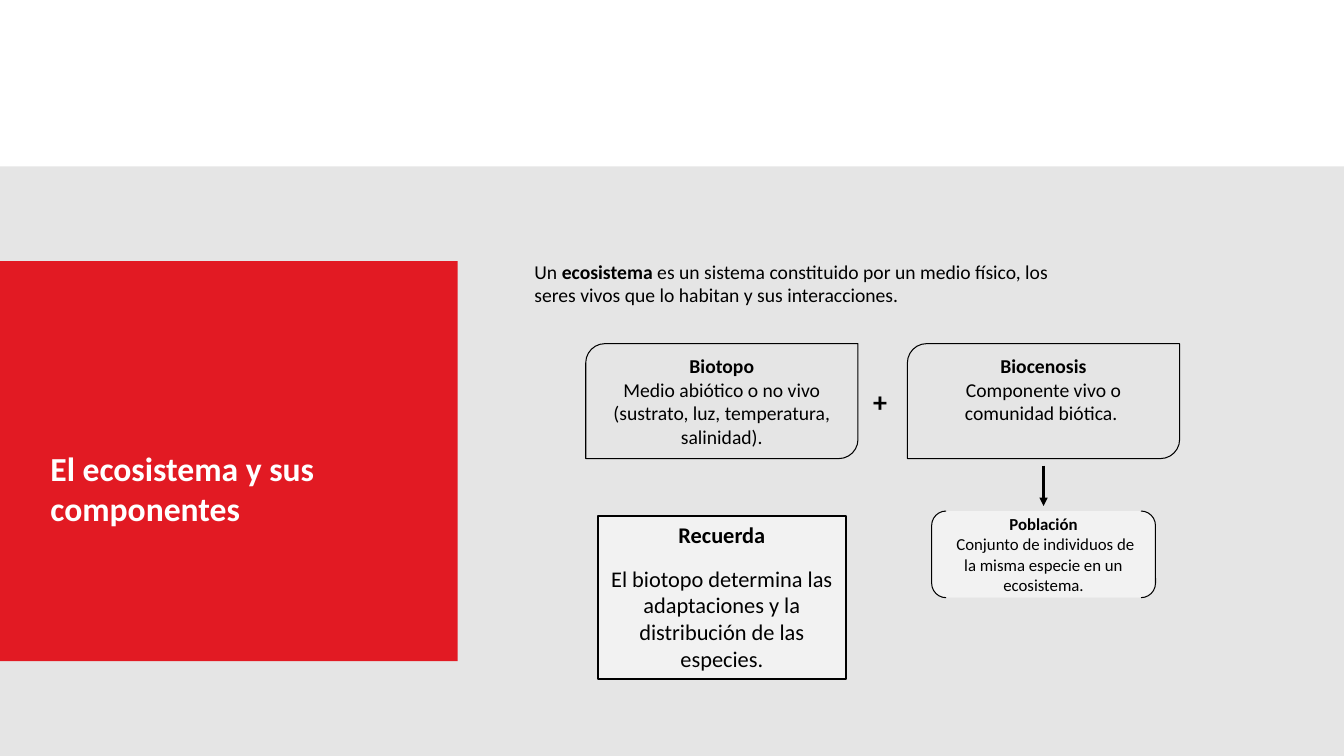
"""Build the slide on the ecosystem and its components."""
from dataclasses import dataclass
from typing import Optional

import pptx
import pptx.dml.color
import pptx.enum.shapes
import pptx.enum.text
import pptx.oxml
import pptx.oxml.ns
import pptx.util
from pptx.util import Inches

COLORS = {"grey": "E5E5E5", "red": "E21A23", "white": "FFFFFF", "black": "000000", "pale": "F2F2F2"}
FONT = "Calibri"
SHAPE = pptx.enum.shapes.MSO_SHAPE
ALIGN = pptx.enum.text.PP_ALIGN
ANCHOR = pptx.enum.text.MSO_ANCHOR
AUTO_SIZE = pptx.enum.text.MSO_AUTO_SIZE


@dataclass(frozen=True)
class Run:
    """A piece of text with its weight."""
    text: str
    bold: bool = False


@dataclass(frozen=True)
class Box:
    """A preset shape with its place, style and paragraphs."""
    preset: int
    at: tuple[float, float, float, float]
    paragraphs: tuple[tuple[Run, ...], ...] = ()
    size: float = 14
    align: int = ALIGN.CENTER
    anchor: int = ANCHOR.TOP
    fill: Optional[str] = None
    opacity: int = 100
    line_width: float = 0
    space_after: float = 0
    grow: bool = False


def concept(heading: str, definition: str) -> tuple[tuple[Run, ...], ...]:
    """Return a bold heading paragraph and a plain definition paragraph."""
    return (Run(heading, True),), (Run(definition),)


PANELS = [
    Box(SHAPE.RECTANGLE, (0, 1.65, 13.33, 5.85), fill="grey"),
    Box(SHAPE.RECTANGLE, (0, 2.59, 4.54, 3.97), fill="red"),
]
COMPONENTS = [
    Box(SHAPE.ROUND_2_DIAG_RECTANGLE, (left, 3.41, 2.7, 1.14), concept(heading, definition), line_width=0.75)
    for left, heading, definition in (
        (5.81, "Biotopo", "Medio abiótico o no vivo (sustrato, luz, temperatura, salinidad)."),
        (9, "Biocenosis", "Componente vivo o comunidad biótica. "),
    )
]
DETAILS = [
    Box(SHAPE.DOUBLE_BRACKET, (9.24, 5.07, 2.22, 0.86),
        concept("Población", " Conjunto de individuos de la misma especie en un ecosistema."),
        size=12, anchor=ANCHOR.MIDDLE, fill="white", opacity=50, line_width=0.75),
    Box(SHAPE.ROUNDED_RECTANGLE, (5.16, 2.38, 5.42, 0.86),
        ((Run("Un "), Run("ecosistema", True),
          Run(" es un sistema constituido por un medio físico, los seres vivos que lo habitan y sus interacciones.")),),
        align=ALIGN.LEFT, anchor=ANCHOR.MIDDLE),
    Box(SHAPE.RECTANGLE, (5.93, 5.12, 2.46, 1.62),
        concept("Recuerda", "El biotopo determina las adaptaciones y la distribución de las especies."),
        size=16, fill="pale", line_width=1.5, space_after=12, grow=True),
    Box(SHAPE.ROUNDED_RECTANGLE, (8.54, 3.55, 0.45, 0.86), ((Run("+", True),),),
        size=20, align=ALIGN.LEFT, anchor=ANCHOR.MIDDLE),
]


def rgb(name: str) -> pptx.dml.color.RGBColor:
    """Return a named colour."""
    return pptx.dml.color.RGBColor.from_string(COLORS[name])


def add_run(paragraph, run: Run, size: float, color: str) -> None:
    """Append one formatted run to a paragraph."""
    piece = paragraph.add_run()
    piece.text = run.text
    piece.font.name = FONT
    piece.font.size = pptx.util.Pt(size)
    piece.font.bold = run.bold
    piece.font.color.rgb = rgb(color)


def paint(shape, box: Box) -> None:
    """Set the fill, outline and shadow of a shape."""
    shape.shadow.inherit = False
    if box.fill:
        shape.fill.solid()
        shape.fill.fore_color.rgb = rgb(box.fill)
        if box.opacity < 100:
            color = shape.fill._xPr.find(".//" + pptx.oxml.ns.qn("a:srgbClr"))
            alpha = pptx.oxml.parse_xml(f'<a:alpha {pptx.oxml.ns.nsdecls("a")} val="{box.opacity * 1000}"/>')
            color.append(alpha)
    else:
        shape.fill.background()
    if box.line_width:
        shape.line.color.rgb = rgb("black")
        shape.line.width = pptx.util.Pt(box.line_width)
    else:
        shape.line.fill.background()


def draw_box(slide, box: Box) -> None:
    """Add a box with its text to the slide."""
    shape = slide.shapes.add_shape(box.preset, *map(Inches, box.at))
    paint(shape, box)
    frame = shape.text_frame
    frame.word_wrap = True
    frame.vertical_anchor = box.anchor
    if box.grow:
        frame.auto_size = AUTO_SIZE.SHAPE_TO_FIT_TEXT
    for index, runs in enumerate(box.paragraphs):
        paragraph = frame.add_paragraph() if index else frame.paragraphs[0]
        paragraph.alignment = box.align
        if box.space_after and index < len(box.paragraphs) - 1:
            paragraph.space_after = pptx.util.Pt(box.space_after)
        for run in runs:
            add_run(paragraph, run, box.size, "black")


def draw_title(slide, text: str) -> None:
    """Place the title in front of the red panel."""
    title = slide.shapes.title
    slide.shapes._spTree.append(title._element)
    title.left, title.top, title.width, title.height = map(Inches, (0.4, 4.39, 3.24, 0.91))
    frame = title.text_frame
    frame.word_wrap = True
    frame.vertical_anchor = ANCHOR.TOP
    frame.auto_size = AUTO_SIZE.SHAPE_TO_FIT_TEXT
    frame.paragraphs[0].alignment = ALIGN.LEFT
    add_run(frame.paragraphs[0], Run(text, True), 24, "white")


def draw_arrow(slide, x: float, top: float, bottom: float) -> None:
    """Add a downward arrow."""
    arrow = slide.shapes.add_connector(
        pptx.enum.shapes.MSO_CONNECTOR.STRAIGHT, Inches(x), Inches(top), Inches(x), Inches(bottom))
    arrow.line.color.rgb = rgb("black")
    arrow.line.width = pptx.util.Pt(1.5)
    namespace = pptx.oxml.ns.nsdecls("a")
    arrow.line._get_or_add_ln().append(pptx.oxml.parse_xml(f'<a:tailEnd {namespace} type="triangle"/>'))
    arrow._element.spPr.append(pptx.oxml.parse_xml(f"<a:effectLst {namespace}/>"))


def main() -> None:
    """Build and save the presentation."""
    deck = pptx.Presentation()
    deck.slide_width, deck.slide_height = Inches(13.33), Inches(7.5)
    slide = deck.slides.add_slide(deck.slide_layouts[5])
    for panel in PANELS:
        draw_box(slide, panel)
    draw_title(slide, "El ecosistema y sus componentes")
    for box in COMPONENTS + DETAILS:
        draw_box(slide, box)
    draw_arrow(slide, 10.35, 4.62, 5.02)
    deck.save("out.pptx")


if __name__ == "__main__":
    main()
